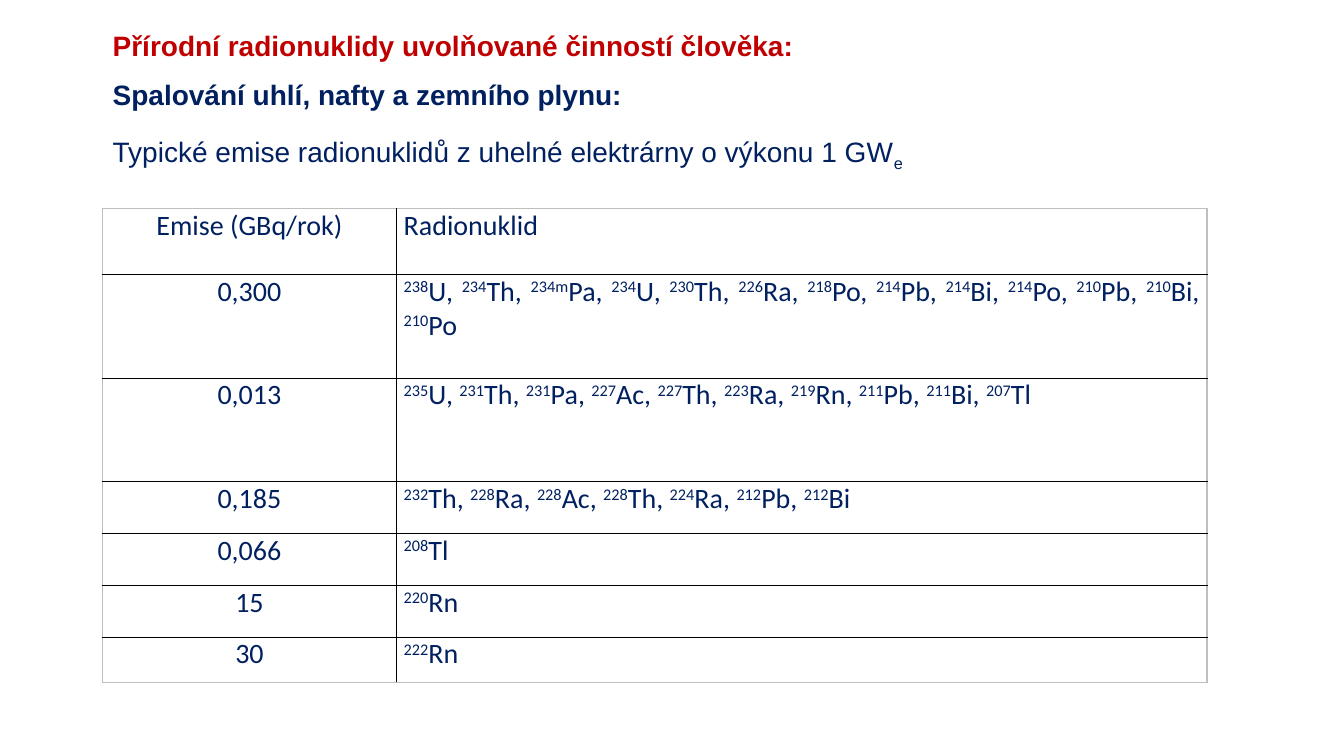
from dataclasses import dataclass

from lxml import etree
from pptx import Presentation, util as u
from pptx.dml.color import RGBColor
from pptx.enum import text
from pptx.oxml.ns import qn


@dataclass(frozen=True)
class Theme:
    navy: str = "002060"
    red: str = "C00000"
    rule: str = "000000"
    frame: str = "BFBFBF"
    paper: str = "FFFFFF"
    heading_font: str = "Arial"
    table_font: str = "Calibri"
    size: int = 20
    border: int = 1
    superscript: int = 30000
    subscript: int = -25000


class SlideWriter:
    def __init__(self, slide, theme):
        self.slide = slide
        self.theme = theme

    def style(self, paragraph, font, color, bold=False):
        paragraph.font.name = font
        paragraph.font.size = u.Pt(self.theme.size)
        paragraph.font.bold = bold
        paragraph.font.color.rgb = RGBColor.from_string(color)

    def run(self, paragraph, words, baseline=0):
        piece = paragraph.add_run()
        piece.text = words
        if baseline:
            piece.font._element.set("baseline", str(baseline))

    def text_frame(self, left, top, width, height):
        frame = self.slide.shapes.add_textbox(
            u.Pt(left), u.Pt(top), u.Pt(width), u.Pt(height)).text_frame
        frame.word_wrap = True
        return frame

    def headings(self, left, top, width, height, lines):
        frame = self.text_frame(left, top, width, height)
        for index, (words, color) in enumerate(lines):
            paragraph = frame.add_paragraph() if index else frame.paragraphs[0]
            paragraph.line_spacing = 0.8
            paragraph.space_before = u.Pt(10)
            paragraph.space_after = u.Pt(6)
            self.style(paragraph, self.theme.heading_font, color, bold=True)
            self.run(paragraph, words)

    def caption(self, left, top, width, height, words, index):
        paragraph = self.text_frame(left, top, width, height).paragraphs[0]
        self.style(paragraph, self.theme.heading_font, self.theme.navy)
        self.run(paragraph, words)
        self.run(paragraph, index, self.theme.subscript)

    def borders(self, cell, outer_sides):
        properties = cell._tc.get_or_add_tcPr()
        for side in "LRTB":
            line = etree.SubElement(properties, qn(f"a:ln{side}"),
                                    w=str(u.Pt(self.theme.border)))
            fill = etree.SubElement(line, qn("a:solidFill"))
            color = self.theme.frame if side in outer_sides else self.theme.rule
            etree.SubElement(fill, qn("a:srgbClr"), val=color)

    def cell(self, cell, pieces, align, outer_sides):
        self.borders(cell, outer_sides)
        cell.fill.solid()
        cell.fill.fore_color.rgb = RGBColor.from_string(self.theme.paper)
        cell.margin_left = cell.margin_right = u.Pt(5.4)
        cell.margin_top = cell.margin_bottom = 0
        paragraph = cell.text_frame.paragraphs[0]
        paragraph.alignment = align
        self.style(paragraph, self.theme.table_font, self.theme.navy)
        for words, baseline in pieces:
            self.run(paragraph, words, baseline)

    def nuclides(self, listing):
        pieces = []
        for nuclide in listing.split(", "):
            mass, symbol = nuclide.split()
            pieces += [(mass, self.theme.superscript), (symbol + ", ", 0)]
        pieces[-1] = (symbol, 0)
        return pieces

    def emission_table(self, left, top, widths, heights, header, emissions):
        table = self.slide.shapes.add_table(
            len(heights), len(widths), u.Pt(left), u.Pt(top),
            u.Pt(sum(widths)), u.Pt(sum(heights))).table
        table.first_row = table.horz_banding = False
        for column, width in zip(table.columns, widths):
            column.width = u.Pt(width)
        contents = [[[(title, 0)] for title in header]]
        contents += [[[(amount, 0)], self.nuclides(listing)]
                     for amount, listing in emissions]
        aligns = text.PP_ALIGN.CENTER, text.PP_ALIGN.JUSTIFY
        for row, height in enumerate(heights):
            table.rows[row].height = u.Pt(height)
            edge = {0: "T", len(heights) - 1: "B"}.get(row, "")
            for column, side in enumerate("LR"):
                self.cell(table.cell(row, column), contents[row][column],
                          aligns[column], side + edge)


def main():
    theme = Theme()
    deck = Presentation()
    deck.slide_width, deck.slide_height = u.Pt(960), u.Pt(540)
    writer = SlideWriter(deck.slides.add_slide(deck.slide_layouts[6]), theme)
    left = 73.4
    writer.headings(left, 21.6, 823, 64.8, [
        ("Přírodní radionuklidy uvolňované činností člověka:", theme.red),
        ("Spalování uhlí, nafty a zemního plynu:", theme.navy),
    ])
    writer.emission_table(
        left, 149, [209.6, 579.2], [47, 74.2, 74, 37, 37, 37, 32.2],
        ["Emise (GBq/rok)", "Radionuklid"],
        [
            ("0,300", "238 U, 234 Th, 234m Pa, 234 U, 230 Th, 226 Ra, 218 Po, "
                      "214 Pb, 214 Bi, 214 Po, 210 Pb, 210 Bi, 210 Po"),
            ("0,013", "235 U, 231 Th, 231 Pa, 227 Ac, 227 Th, 223 Ra, 219 Rn, "
                      "211 Pb, 211 Bi, 207 Tl"),
            ("0,185", "232 Th, 228 Ra, 228 Ac, 228 Th, 224 Ra, 212 Pb, 212 Bi"),
            ("0,066", "208 Tl"),
            ("15", "220 Rn"),
            ("30", "222 Rn"),
        ])
    writer.caption(left, 92.6, 823, 32,
                   "Typické emise radionuklidů z\u00a0uhelné elektrárny o výkonu 1 GW".replace("\u00a0", " "), "e")
    deck.save("out.pptx")


if __name__ == "__main__":
    main()
